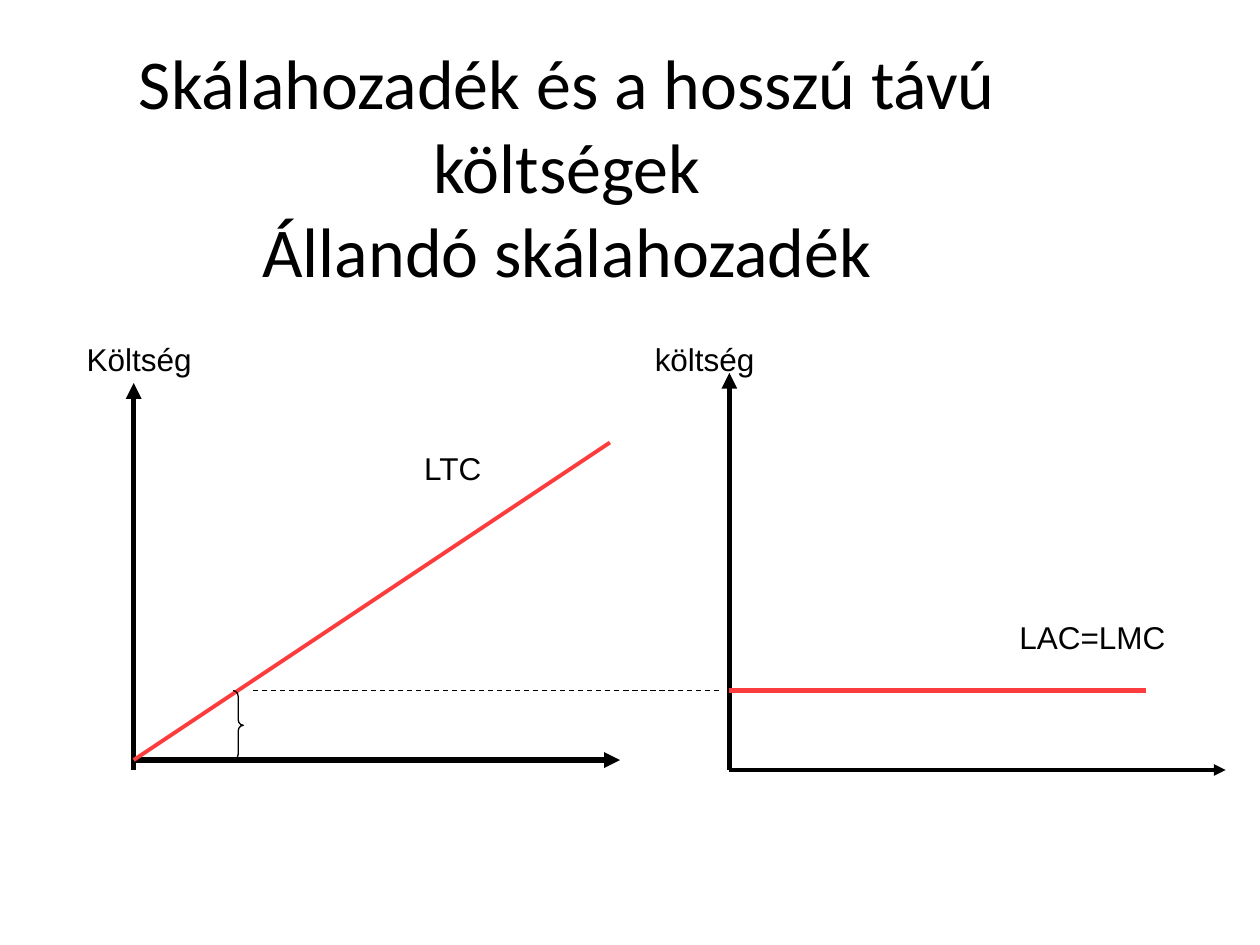
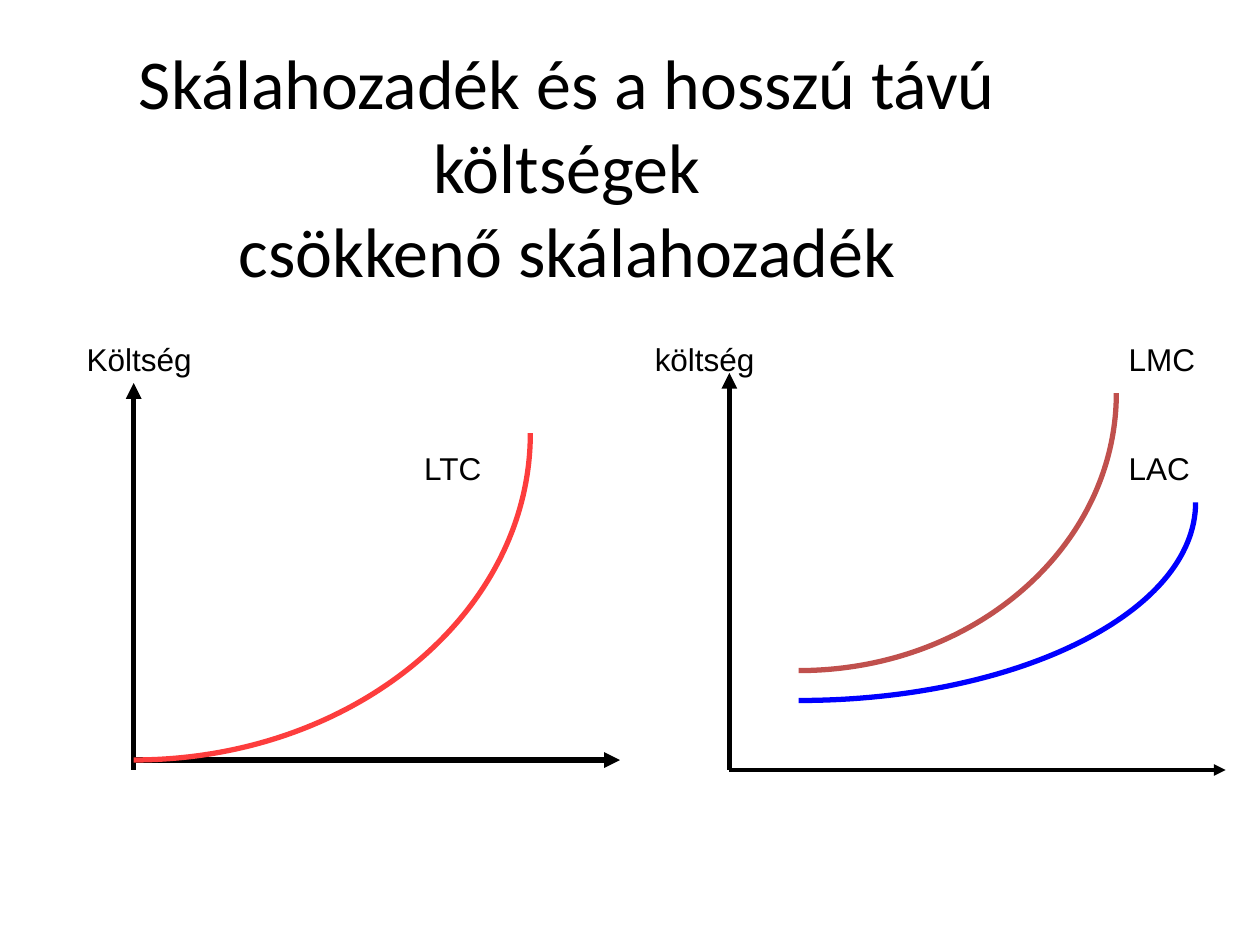
from lxml import etree
from pptx import Presentation
from pptx.dml.color import RGBColor
from pptx.enum.dml import MSO_LINE
from pptx.enum.shapes import MSO_CONNECTOR, MSO_SHAPE
from pptx.enum.text import MSO_ANCHOR, PP_ALIGN
from pptx.oxml.ns import qn
from pptx.util import Pt

STRAIGHT = MSO_CONNECTOR.STRAIGHT
BRACE = MSO_SHAPE.RIGHT_BRACE
DASH = MSO_LINE.DASH
TOP, MIDDLE = MSO_ANCHOR.TOP, MSO_ANCHOR.MIDDLE
LEFT, CENTER = PP_ALIGN.LEFT, PP_ALIGN.CENTER

COLORS = {"ink": "000000", "red": "FD3D3D", "blue": "0000FF", "brick": "C0504D"}

# Positions in points, shared by both slides
COST_AXIS_X, UNIT_AXIS_X = 76.4, 416.8
TOTAL_BASE_Y, UNIT_BASE_Y = 434.3, 440
AXIS_LABEL_Y = 190.8
UNIT_COST_Y = 394.6
UNIT_CURVE_X = 456.4
ROUNDNESS = 0.5523  # control point distance of a quarter ellipse


def color(name):
    return RGBColor.from_string(COLORS[name])


class Slides:
    """Holds the deck, its style and the slide being drawn."""

    def __init__(self):
        self.deck = Presentation()
        self.deck.slide_width, self.deck.slide_height = Pt(720), Pt(540)
        self.slide = None

    def new_slide(self, subject):
        self.slide = self.deck.slides.add_slide(self.deck.slide_layouts[6])
        self.text(f"Skálahozadék és a hosszú távú költségek\v{subject}",
                  0, 21.6, 648, 146.2, size=40, font="Calibri",
                  align=CENTER, anchor=MIDDLE)

    def text(self, words, left, top, width, height=28.8, size=18, font="Arial",
             align=LEFT, anchor=TOP, gap=0, tab=None):
        box = self.slide.shapes.add_textbox(Pt(left), Pt(top), Pt(width), Pt(height))
        frame = box.text_frame
        frame.word_wrap = True
        frame.vertical_anchor = anchor
        frame.text = words
        for index, para in enumerate(frame.paragraphs):
            para.alignment = align
            if index:
                para.space_before = Pt(gap)
            if tab:
                stops = etree.SubElement(para._p.get_or_add_pPr(), qn("a:tabLst"))
                etree.SubElement(stops, qn("a:tab"), pos=str(Pt(tab)), algn="l")
            for span in para.runs:
                span.font.size, span.font.name = Pt(size), font
                span.font.color.rgb = color("ink")

    def stroke(self, shape, name, width):
        shape.line.color.rgb = color(name)
        shape.line.width = Pt(width)

    def line(self, start, end, name="ink", width=3, dash=None, arrow=False):
        points = [Pt(value) for value in (*start, *end)]
        connector = self.slide.shapes.add_connector(STRAIGHT, *points)
        self.stroke(connector, name, width)
        if dash:
            connector.line.dash_style = dash
        if arrow:
            outline = connector.line._get_or_add_ln()
            etree.SubElement(outline, qn("a:tailEnd"), type="triangle")
        etree.SubElement(connector._element.spPr, qn("a:effectLst"))

    def outline_only(self, shape, name, width):
        shape.shadow.inherit = False
        shape.fill.background()
        self.stroke(shape, name, width)

    def brace(self, left, top, width, height):
        shape = self.slide.shapes.add_shape(
            BRACE, Pt(left), Pt(top), Pt(width), Pt(height))
        shape.adjustments[0] = 0.57
        self.outline_only(shape, "ink", 0.75)

    def rising_curve(self, start, end, name):
        """Draw a quarter ellipse, flat at its start and steep at its end."""
        builder = self.slide.shapes.build_freeform(*map(Pt, start))
        builder.add_line_segments([tuple(map(Pt, end))], close=False)
        shape = builder.convert_to_shape()
        segment = next(shape._element.iter(qn("a:lnTo")))
        segment.tag = qn("a:cubicBezTo")
        controls = ((shape.width * ROUNDNESS, shape.height),
                    (shape.width, shape.height * ROUNDNESS))
        for index, (x, y) in enumerate(controls):
            point = etree.Element(qn("a:pt"), x=str(round(x)), y=str(round(y)))
            segment.insert(index, point)
        self.outline_only(shape, name, 3)

    def axes(self):
        self.line((COST_AXIS_X, UNIT_BASE_Y), (COST_AXIS_X, 218.9), arrow=True)
        self.line((COST_AXIS_X, TOTAL_BASE_Y), (354.3, TOTAL_BASE_Y), arrow=True)
        self.line((UNIT_AXIS_X, UNIT_BASE_Y), (UNIT_AXIS_X, 213.1), arrow=True)
        self.line((UNIT_AXIS_X, UNIT_BASE_Y), (700.4, UNIT_BASE_Y), width=2.25, arrow=True)

    def labels(self):
        self.text("Költség\tköltség", 42.5, AXIS_LABEL_Y, 419.8, tab=324.6)
        self.text("LTC", 235.3, 253, 62.6)


def constant_returns(slides):
    slides.new_slide("Állandó skálahozadék")
    slides.axes()
    slides.line((COST_AXIS_X, TOTAL_BASE_Y), (348.5, 252.9), "red", 2.25)
    slides.line((UNIT_AXIS_X, UNIT_COST_Y), (655, UNIT_COST_Y), "red")
    slides.labels()
    slides.text("LAC=LMC", 575.4, 349.5, 124.6)
    slides.brace(133.2, UNIT_COST_Y, 5.8, TOTAL_BASE_Y - UNIT_COST_Y)
    slides.line((144.7, UNIT_COST_Y), (411.1, UNIT_COST_Y), width=0.75, dash=DASH)


def decreasing_returns(slides):
    slides.new_slide("csökkenő skálahozadék")
    slides.axes()
    slides.labels()
    slides.text("LMC\nLAC", 637.9, AXIS_LABEL_Y, 62.6, 93.6, gap=40.4)
    slides.rising_curve((COST_AXIS_X, TOTAL_BASE_Y), (303.1, 247.5), "red")
    slides.rising_curve((UNIT_CURVE_X, 400.3), (683.2, 287.1), "blue")
    slides.rising_curve((UNIT_CURVE_X, 383.2), (637.9, 224.6), "brick")


def main():
    slides = Slides()
    constant_returns(slides)
    decreasing_returns(slides)
    slides.deck.save("out.pptx")


if __name__ == "__main__":
    main()
